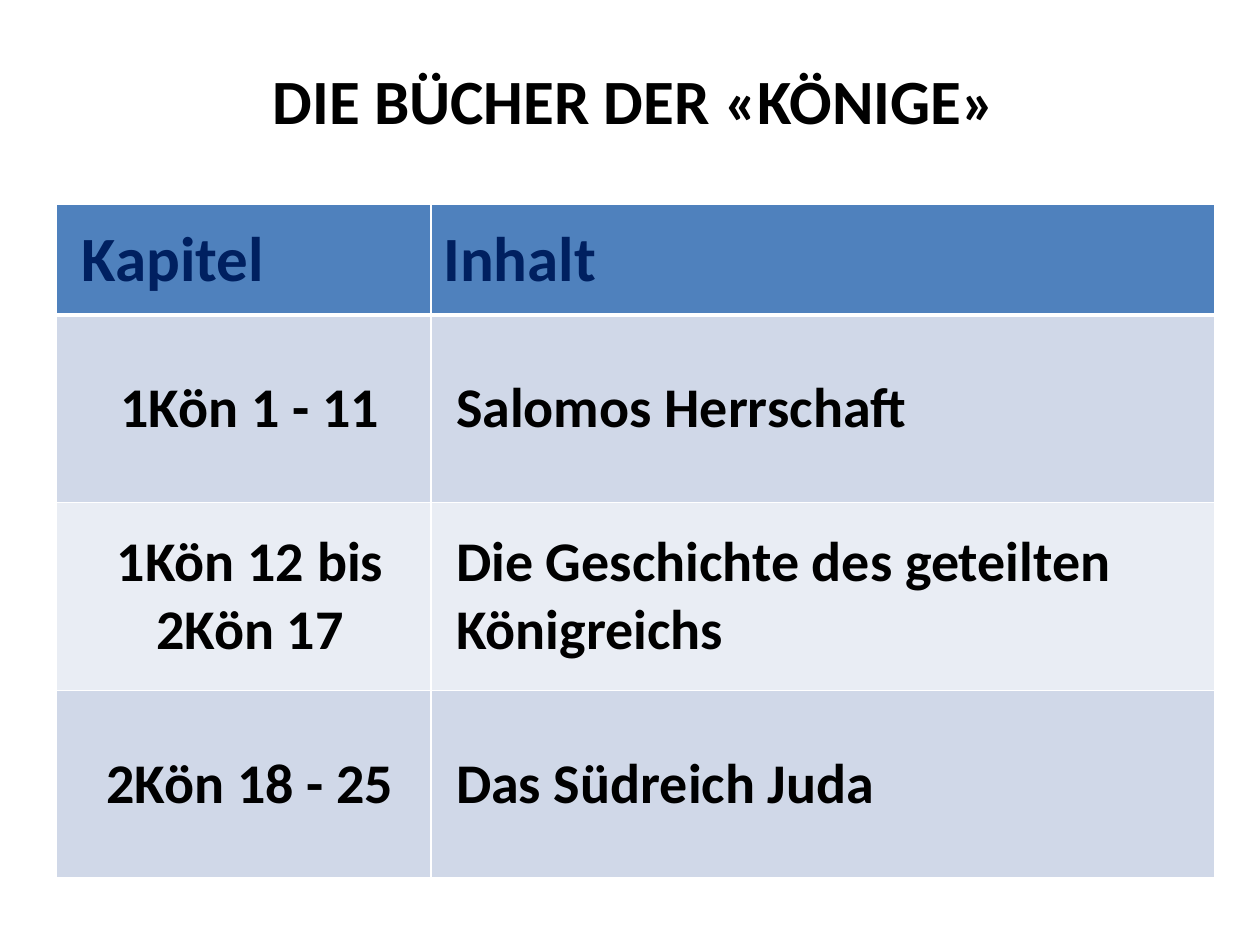
import pptx
import pptx.dml.color
import pptx.enum.text
import pptx.oxml
import pptx.oxml.ns
import pptx.util

Pt = pptx.util.Pt
PP_ALIGN = pptx.enum.text.PP_ALIGN
ANCHOR = pptx.enum.text.MSO_ANCHOR

FONT = "Calibri"
WHITE, BLACK, NAVY = "FFFFFF", "000000", "002060"
HEADER_BLUE = "4F81BD"
BANDS = ("D0D8E8", "E9EDF4")
COLUMN_WIDTHS = (213.8, 447.8)
HEADER_HEIGHT, BODY_HEIGHT = 63.4, 107.3
INSET, WIDE_INSET = 7.2, 14.4

BOOKS = (
    ("Kapitel", "Inhalt"),
    ("1Kön 1 - 11", "Salomos Herrschaft"),
    ("1Kön 12 bis\v2Kön 17", "Die Geschichte des geteilten\vKönigreichs"),
    ("2Kön 18 - 25", "Das Südreich Juda"),
)


def rgb(color):
    return pptx.dml.color.RGBColor.from_string(color)


def paint(fill, color):
    fill.solid()
    fill.fore_color.rgb = rgb(color)


def write(text_frame, text, size, color, align):
    text_frame.text = text
    for paragraph in text_frame.paragraphs:
        paragraph.alignment = align
        for run in paragraph.runs:
            run.font.name = FONT
            run.font.size = Pt(size)
            run.font.bold = True
            run.font.color.rgb = rgb(color)


def add_borders(cell, top, bottom):
    """Draw white cell borders; these come before the fill in the XML."""
    properties = cell._tc.get_or_add_tcPr()
    for side, width in (("L", 1), ("R", 1), ("T", top), ("B", bottom)):
        properties.append(pptx.oxml.parse_xml(
            f'<a:ln{side} {pptx.oxml.ns.nsdecls("a")} w="{Pt(width)}">'
            f'<a:solidFill><a:srgbClr val="{WHITE}"/></a:solidFill>'
            f'</a:ln{side}>'))


def set_title(slide, text):
    title = slide.shapes.title
    title.left, title.top = Pt(31), Pt(31.7)
    title.width, title.height = Pt(663), Pt(45.4)
    paint(title.fill, WHITE)
    title.text_frame.auto_size = pptx.enum.text.MSO_AUTO_SIZE.NONE
    title.text_frame.vertical_anchor = ANCHOR.TOP
    write(title.text_frame, text, 36, BLACK, PP_ALIGN.CENTER)


def format_cell(cell, row, column, text):
    is_header = row == 0
    add_borders(cell, top=3 if row == 1 else 1, bottom=3 if is_header else 1)
    paint(cell.fill, HEADER_BLUE if is_header else BANDS[(row - 1) % 2])
    cell.vertical_anchor = ANCHOR.MIDDLE
    cell.margin_left = Pt(INSET if is_header and column == 1 else WIDE_INSET)
    cell.margin_right = Pt(INSET)
    if is_header:
        write(cell.text_frame, text, 36, NAVY, PP_ALIGN.LEFT)
    else:
        align = PP_ALIGN.CENTER if column == 0 else PP_ALIGN.LEFT
        write(cell.text_frame, text, 32, BLACK, align)


def add_book_table(slide, books):
    heights = [HEADER_HEIGHT] + [BODY_HEIGHT] * (len(books) - 1)
    chapters = slide.shapes.add_table(
        len(books), len(COLUMN_WIDTHS), Pt(32.4), Pt(116.6),
        Pt(sum(COLUMN_WIDTHS)), Pt(sum(heights))).table
    for column, width in zip(chapters.columns, COLUMN_WIDTHS):
        column.width = Pt(width)
    for row, (height, entries) in enumerate(zip(heights, books)):
        chapters.rows[row].height = Pt(height)
        for column, text in enumerate(entries):
            format_cell(chapters.cell(row, column), row, column, text)


def main():
    presentation = pptx.Presentation()
    presentation.slide_width, presentation.slide_height = Pt(720), Pt(540)
    slide = presentation.slides.add_slide(presentation.slide_layouts[5])

    # Heading
    set_title(slide, "DIE BÜCHER DER «KÖNIGE»")

    # Chapters and their content
    add_book_table(slide, BOOKS)

    presentation.save("out.pptx")


if __name__ == "__main__":
    main()
